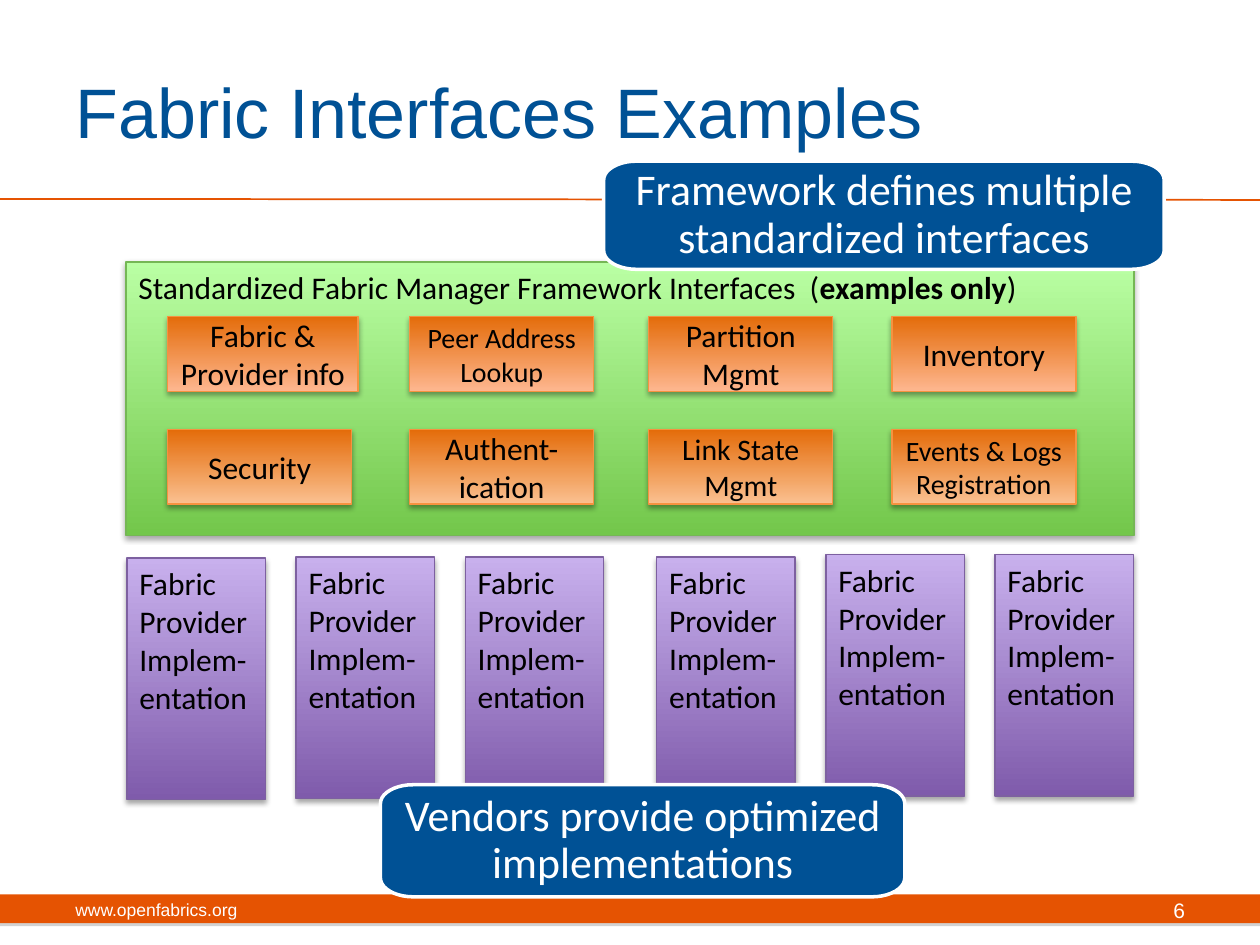
from math import cos, pi, sin

from lxml import etree
from pptx import Presentation
from pptx.dml.color import RGBColor
from pptx.enum.shapes import MSO_CONNECTOR, MSO_SHAPE
from pptx.enum.text import MSO_ANCHOR, PP_ALIGN
from pptx.oxml.ns import qn
from pptx.util import Cm, Pt

# Content (lengths in cm)
TITLE = "Fabric Interfaces Examples"
FOOTERS = [("www.openfabrics.org", 10, PP_ALIGN.LEFT, 1.27, 8.05),
           ("6", 12, PP_ALIGN.RIGHT, 18.21, 5.93)]
FRAMEWORK = [("Standardized Fabric Manager Framework Interfaces  (", False),
             ("examples only", True), (")", False)]
INTERFACE_ROWS = [  # top, height, lower colour, (label, size) per column
    (6.38, 1.52, "FEB790", [("Fabric & Provider info", 18), ("Peer Address Lookup", 16),
                            ("Partition Mgmt", 18), ("Inventory", 18)]),
    (8.66, 1.5, "FAC090", [("Security", 18), ("Authent-ication", 18),
                           ("Link State Mgmt", 17), ("Events & Logs Registration", 16)]),
]
COLUMN_LEFTS = [3.38, 8.26, 13.08, 17.98]
INTERFACE_WIDTH = 3.71
WIDE_INTERFACE = {"Fabric & Provider info": 3.84}
PROVIDER = "Fabric Provider Implem-entation"
PROVIDER_GROUPS = [(2.56, [11.25, 11.23, 11.23]), (13.24, [11.23, 11.18, 11.18])]
PROVIDER_PITCH, PROVIDER_WIDTH, PROVIDER_HEIGHT = 3.41, 2.79, 4.87
CALLOUTS = [("Framework defines multiple standardized interfaces", (12.17, 3.25, 11.3, 2.18)),
            ("Vendors provide optimized implementations", (7.67, 15.82, 10.57, 2.26))]
CORNER_X, CORNER_Y, CORNER_STEPS = 0.66, 0.38, 10
ORANGE, BLUE, WHITE, BLACK = "E55302", "005195", "FFFFFF", "000000"


def rgb(code):
    return RGBColor.from_string(code)


def write(frame, runs, size, color, align=PP_ALIGN.LEFT, anchor=MSO_ANCHOR.MIDDLE, font="Calibri"):
    frame.word_wrap = True
    frame.vertical_anchor = anchor
    paragraph = frame.paragraphs[0]
    paragraph.alignment = align
    for text, bold in runs:
        run = paragraph.add_run()
        run.text = text
        run.font.size, run.font.name, run.font.bold = Pt(size), font, bold
        run.font.color.rgb = rgb(color)
    return paragraph


def add_shadow(shape, color, blur):
    shape.shadow.inherit = False
    effects = shape._element.spPr.find(qn("a:effectLst"))
    outer = etree.SubElement(effects, qn("a:outerShdw"), blurRad=str(Pt(blur)),
                             dist=str(Pt(1.8)), dir="5400000", rotWithShape="0")
    tone = etree.SubElement(outer, qn("a:srgbClr"), val=color)
    etree.SubElement(tone, qn("a:alpha"), val="35000")


def add_box(slide, place, bottom, top, outline):
    box = slide.shapes.add_shape(MSO_SHAPE.RECTANGLE, *map(Cm, place))
    box.fill.gradient()
    box.fill.gradient_angle = 90
    for stop, color, position in zip(box.fill.gradient_stops, (bottom, top), (0, 1)):
        stop.color.rgb = rgb(color)
        stop.position = position
    box.line.color.rgb = rgb(outline)
    box.line.width = Pt(0.75)
    add_shadow(box, BLACK, 3.1)
    return box


def add_callout(slide, text, place):
    left, top, width, height = place
    right, bottom = left + width - CORNER_X, top + height - CORNER_Y
    centres = [(right, bottom), (left + CORNER_X, bottom),
               (left + CORNER_X, top + CORNER_Y), (right, top + CORNER_Y)]
    points = []
    for quarter, (x, y) in enumerate(centres):
        for step in range(CORNER_STEPS + 1):
            angle = (quarter + step / CORNER_STEPS) * pi / 2
            points.append((Cm(x + CORNER_X * cos(angle)), Cm(y + CORNER_Y * sin(angle))))
    builder = slide.shapes.build_freeform(*points[0])
    builder.add_line_segments(points[1:], close=True)
    callout = builder.convert_to_shape()
    callout.shadow.inherit = False
    callout.fill.solid()
    callout.fill.fore_color.rgb = rgb(BLUE)
    callout.line.color.rgb = rgb(WHITE)
    callout.line.width = Pt(2)
    frame = callout.text_frame
    frame.margin_left = frame.margin_right = frame.margin_top = frame.margin_bottom = Cm(0.41)
    write(frame, [(text, False)], 25, WHITE, PP_ALIGN.CENTER).line_spacing = 0.9


def main():
    deck = Presentation()
    deck.slide_width, deck.slide_height = Cm(25.4), Cm(19.05)
    slide = deck.slides.add_slide(deck.slide_layouts[5])

    # Footer band, rule and title
    band = slide.shapes.add_shape(MSO_SHAPE.RECTANGLE, 0, Cm(18.03), Cm(25.4), Cm(0.58))
    band.fill.solid()
    band.fill.fore_color.rgb = rgb(ORANGE)
    band.line.fill.background()
    add_shadow(band, "808080", 0)
    rule = slide.shapes.add_connector(MSO_CONNECTOR.STRAIGHT, 0, Cm(4.01), Cm(25.4), Cm(4.03))
    rule.line.color.rgb = rgb(ORANGE)
    rule.line.width = Pt(1)
    etree.SubElement(rule._element.spPr, qn("a:effectLst"))
    title = slide.shapes.title
    title.left, title.top, title.width, title.height = map(Cm, (1.27, 0.64, 20.75, 3.18))
    write(title.text_frame, [(TITLE, False)], 40, BLUE, font="Arial")
    for text, size, align, left, width in FOOTERS:
        footer = slide.shapes.add_textbox(*map(Cm, (left, 17.83, width, 1.02)))
        write(footer.text_frame, [(text, False)], size, WHITE, align, font="Arial")

    # Framework with its interfaces
    framework = add_box(slide, (2.54, 5.28, 20.32, 5.51), "73C74B", "BAFFA4", "75B755")
    write(framework.text_frame, FRAMEWORK, 18, BLACK, anchor=MSO_ANCHOR.TOP)
    for top, height, lower, interfaces in INTERFACE_ROWS:
        for left, (label, size) in zip(COLUMN_LEFTS, interfaces):
            width = WIDE_INTERFACE.get(label, INTERFACE_WIDTH)
            interface = add_box(slide, (left, top, width, height), lower, "E46C0A", "F69240")
            write(interface.text_frame, [(label, False)], size, BLACK, PP_ALIGN.CENTER)

    # Provider implementations
    for start, tops in PROVIDER_GROUPS:
        for column, top in enumerate(tops):
            place = (start + column * PROVIDER_PITCH, top, PROVIDER_WIDTH, PROVIDER_HEIGHT)
            provider = add_box(slide, place, "7F5BAB", "C8B0ED", "7D60A0")
            write(provider.text_frame, [(PROVIDER, False)], 18, BLACK, anchor=MSO_ANCHOR.TOP)

    # Callouts
    for text, place in CALLOUTS:
        add_callout(slide, text, place)

    deck.save("out.pptx")


if __name__ == "__main__":
    main()
